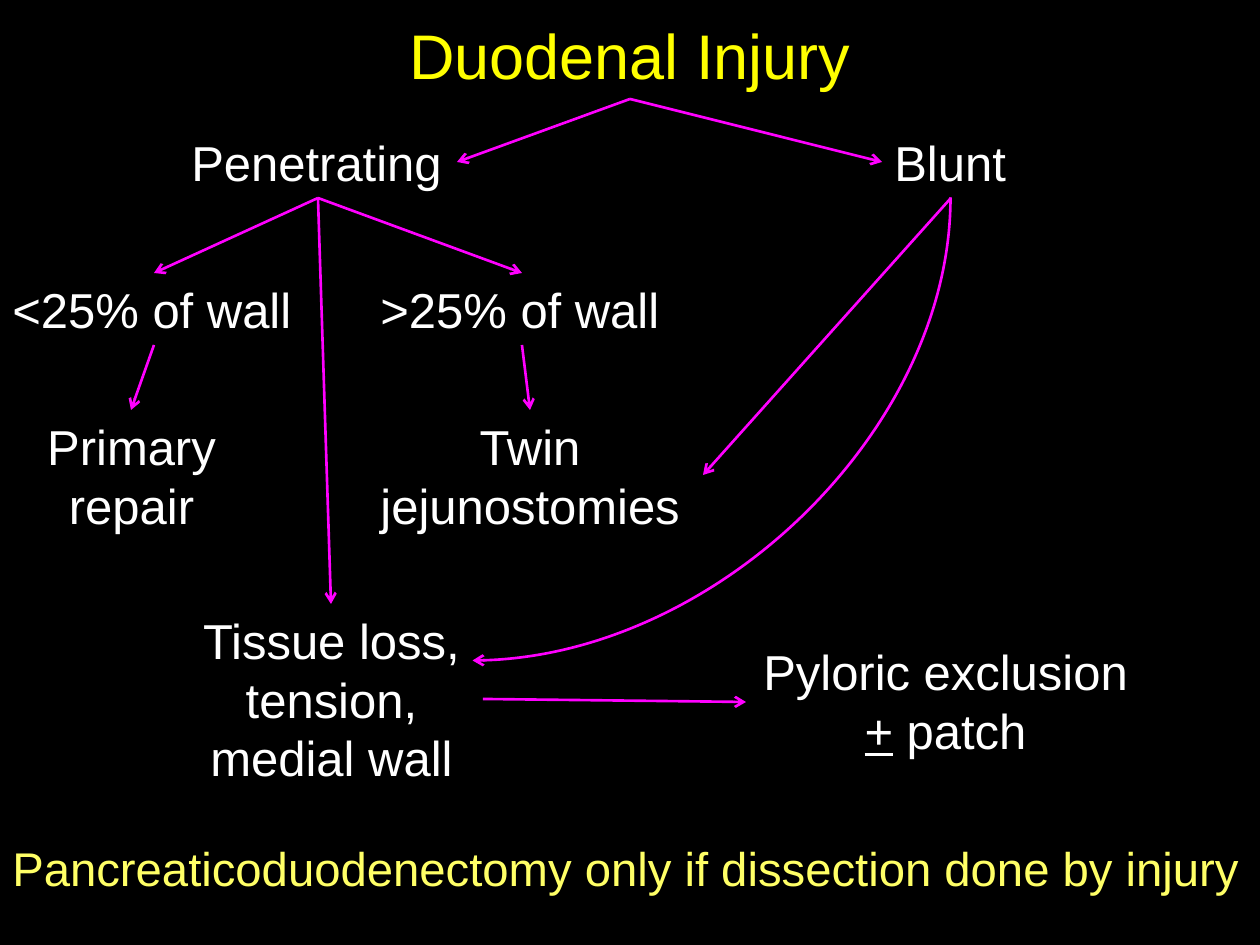
"""Build the duodenal injury decision tree slide."""
from typing import NamedTuple

from lxml.etree import SubElement
from pptx import Presentation
from pptx.dml.color import RGBColor
from pptx.enum.shapes import MSO_CONNECTOR
from pptx.enum.text import MSO_AUTO_SIZE, PP_ALIGN
from pptx.oxml.ns import qn
from pptx.util import Pt

EMU_PER_PX = 914400 / 126
WHITE = "FFFFFF"
MAGENTA = "FF00FF"


class Label(NamedTuple):
    spans: tuple[str, ...]
    left: int
    top: int
    width: int
    height: int
    size: int = 28
    color: str = WHITE
    centered: bool = False
    wrap: bool = True


class Arrow(NamedTuple):
    start: tuple[int, int]
    end: tuple[int, int]


PENETRATING_FOOT = (318, 198)
BLUNT_FOOT = (951, 198)
TITLE_FOOT = (630, 99)

LABELS = [
    Label(("Duodenal Injury",), 0, 10, 1260, 89, 36, "FFFF00", centered=True),
    Label(("Pancreaticoduodenectomy only if dissection done by injury",),
          0, 833, 1260, 71, 27, "FFFF66"),
    Label(("Penetrating",), 179, 126, 278, 72, wrap=False),
    Label(("Blunt",), 882, 126, 139, 72, wrap=False),
    Label(("<25% of wall",), 0, 273, 307, 72, wrap=False),
    Label((">25% of wall",), 368, 273, 307, 72, wrap=False),
    Label(("Primary repair",), 32, 410, 199, 131, centered=True),
    Label(("Twin jejunostomies",), 357, 410, 346, 131, centered=True),
    Label(("Tissue loss, tension, medial wall",), 179, 604, 305, 190, centered=True),
    Label(("Pyloric exclusion ", "+", " patch"), 746, 635, 399, 131, centered=True),
]

ARROWS = [
    Arrow(TITLE_FOOT, (457, 162)),
    Arrow(TITLE_FOOT, (882, 162)),
    Arrow(PENETRATING_FOOT, (154, 273)),
    Arrow(PENETRATING_FOOT, (522, 273)),
    Arrow(PENETRATING_FOOT, (331, 604)),
    Arrow((154, 345), (131, 410)),
    Arrow((522, 345), (530, 410)),
    Arrow(BLUNT_FOOT, (703, 475)),
    Arrow((483, 699), (746, 702)),
]
BLUNT_CURVE = Arrow((480, 190), (943, 668))


def px(length: int) -> int:
    """Turn pixels into EMU."""
    return round(length * EMU_PER_PX)


def rgb(color: str) -> RGBColor:
    """Turn a hex string into a colour."""
    return RGBColor.from_string(color)


def add_label(page, label: Label) -> None:
    """Draw one text box, underlining the plus of a plus-minus sign."""
    box = page.shapes.add_textbox(
        px(label.left), px(label.top), px(label.width), px(label.height))
    frame = box.text_frame
    frame.word_wrap = label.wrap
    frame.auto_size = MSO_AUTO_SIZE.SHAPE_TO_FIT_TEXT
    para = frame.paragraphs[0]
    para.alignment = PP_ALIGN.CENTER if label.centered else PP_ALIGN.LEFT
    para.font.name = "Arial"
    para.font.size = Pt(label.size)
    para.font.color.rgb = rgb(label.color)
    for text in label.spans:
        span = para.add_run()
        span.text = text
        if text == "+":
            span.font.underline = True


def add_arrow(page, arrow: Arrow, kind=MSO_CONNECTOR.STRAIGHT):
    """Draw one open-headed arrow and return its connector."""
    connector = page.shapes.add_connector(
        kind, *map(px, arrow.start + arrow.end))
    connector.line.color.rgb = rgb(MAGENTA)
    connector.line.width = Pt(1.5)
    properties = connector._element.spPr
    SubElement(properties.find(qn("a:ln")), qn("a:tailEnd"), type="arrow")
    SubElement(properties, qn("a:effectLst"))
    return connector


def add_quarter_curve(page, arrow: Arrow) -> None:
    """Draw a one-bend curved arrow turned by a right angle."""
    properties = add_arrow(page, arrow, MSO_CONNECTOR.CURVE)._element.spPr
    properties.find(qn("a:prstGeom")).set("prst", "curvedConnector2")
    properties.find(qn("a:xfrm")).set("rot", str(90 * 60000))


def main() -> None:
    """Build and save the deck."""
    deck = Presentation()
    deck.slide_width, deck.slide_height = px(1260), px(945)
    page = deck.slides.add_slide(deck.slide_layouts[6])
    page.background.fill.solid()
    page.background.fill.fore_color.rgb = rgb("000000")
    for label in LABELS:
        add_label(page, label)
    for arrow in ARROWS:
        add_arrow(page, arrow)
    add_quarter_curve(page, BLUNT_CURVE)
    deck.save("out.pptx")


if __name__ == "__main__":
    main()
